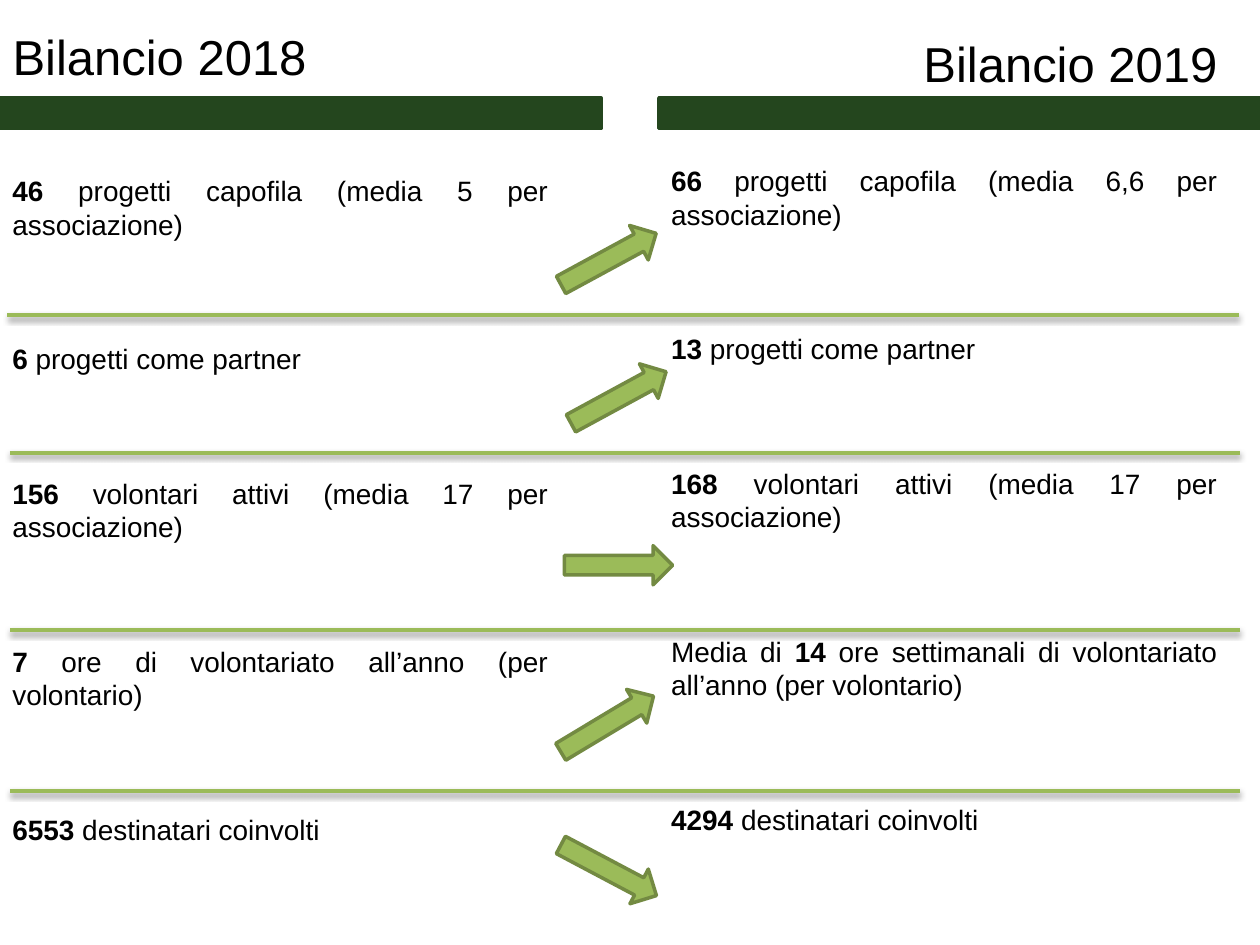
from lxml import etree
from pptx import Presentation
from pptx.dml.color import RGBColor
from pptx.enum.shapes import MSO_CONNECTOR, MSO_SHAPE
from pptx.enum.text import MSO_ANCHOR, MSO_AUTO_SIZE, PP_ALIGN
from pptx.oxml.ns import qn
from pptx.util import Cm, Pt

RECT, ARROW = MSO_SHAPE.RECTANGLE, MSO_SHAPE.RIGHT_ARROW
STRAIGHT = MSO_CONNECTOR.STRAIGHT
TOP, NO_FIT = MSO_ANCHOR.TOP, MSO_AUTO_SIZE.NONE
JUSTIFY, RIGHT = PP_ALIGN.JUSTIFY, PP_ALIGN.RIGHT

BLACK = RGBColor(0x00, 0x00, 0x00)
DARK_GREEN = RGBColor(0x24, 0x46, 0x1E)
GREEN = RGBColor(0x9B, 0xBB, 0x59)
OLIVE = RGBColor(0x73, 0x8A, 0x42)

FONT = "Arial"
LINE_PT = 19.2  # line pitch of the body text
GAP_LINES = 3   # free lines between two entries

# Each entry: text before the figure, figure, text after it
ENTRIES_2018 = [
    ("", "46", " progetti capofila (media 5 per associazione)"),
    ("", "6", " progetti come partner"),
    ("", "156", " volontari attivi (media 17 per associazione)"),
    ("", "7", " ore di volontariato all’anno (per volontario)"),
    ("", "6553", " destinatari coinvolti"),
]
ENTRIES_2019 = [
    ("", "66", " progetti capofila (media 6,6 per associazione)"),
    ("", "13", " progetti come partner"),
    ("", "168", " volontari attivi (media 17 per associazione)"),
    ("Media di ", "14", " ore settimanali di volontariato all’anno (per volontario)"),
    ("", "4294", " destinatari coinvolti"),
]
# Left, right, height of each divider (cm)
DIVIDERS = [(0.15, 24.97, 6.35), (0.2, 24.99, 9.13),
            (0.2, 24.99, 12.7), (0.2, 24.99, 15.95)]
# Left, top (cm) and rotation of each trend arrow
TRENDS = [(11.18, 4.83, 331.5), (11.38, 7.62, 331.5), (11.38, 11, 0),
          (11.15, 14.2, 329), (11.18, 17.15, 27.9)]


def set_font(p, size):
    p.font.name = FONT
    p.font.size = Pt(size)
    p.font.color.rgb = BLACK


def format_heading(sp, text, left, top, align):
    sp.left, sp.top, sp.width, sp.height = Cm(left), Cm(top), Cm(11.3), Cm(2.64)
    tf = sp.text_frame
    tf.word_wrap, tf.auto_size, tf.vertical_anchor = True, NO_FIT, TOP
    tf.margin_top = Cm(0.26)
    p = tf.paragraphs[0]
    p.text, p.alignment = text, align
    set_font(p, 28)


def add_entries(s, left, top, width, entries):
    tf = s.shapes.add_textbox(Cm(left), Cm(top), Cm(width), Cm(13.94)).text_frame
    tf.word_wrap = True
    for i, (before, figure, after) in enumerate(entries):
        p = tf.add_paragraph() if i else tf.paragraphs[0]
        p.alignment = JUSTIFY
        p.line_spacing = Pt(LINE_PT)
        if i:
            p.space_before = Pt(GAP_LINES * LINE_PT)
        set_font(p, 16)
        for text, bold in ((before, False), (figure, True), (after, False)):
            if text:
                r = p.add_run()
                r.text, r.font.bold = text, bold


def add_filled(s, kind, left, top, width, height, fill, line):
    sp = s.shapes.add_shape(kind, Cm(left), Cm(top), Cm(width), Cm(height))
    sp.shadow.inherit = False
    sp.fill.solid()
    sp.fill.fore_color.rgb = fill
    sp.line.color.rgb = line
    sp.line.width = Pt(2)
    return sp


def add_divider(s, left, right, y):
    line = s.shapes.add_connector(STRAIGHT, Cm(left), Cm(y), Cm(right), Cm(y))
    line.line.color.rgb = GREEN
    line.line.width = Pt(2)
    # Soft shadow below the line
    effects = etree.SubElement(line._element.spPr, qn("a:effectLst"))
    shadow = etree.SubElement(effects, qn("a:outerShdw"), blurRad="40000",
                              dist="20000", dir="5400000", rotWithShape="0")
    color = etree.SubElement(shadow, qn("a:srgbClr"), val=str(BLACK))
    etree.SubElement(color, qn("a:alpha"), val="38000")


def main():
    prs = Presentation()
    prs.slide_width, prs.slide_height = Cm(25.4), Cm(19.05)
    s = prs.slides.add_slide(prs.slide_layouts[5])

    # Headings and their bars
    format_heading(s.shapes.title, "Bilancio 2018", 0, 0.28, JUSTIFY)
    heading = s.shapes.add_textbox(0, 0, 0, 0)
    format_heading(heading, "Bilancio 2019", 13.49, 0.41, RIGHT)
    for left in (0, 13.28):
        add_filled(s, RECT, left, 1.98, 12.12, 0.61, DARK_GREEN, DARK_GREEN)

    # Figures of the two years
    add_entries(s, 0, 3.38, 11.3, ENTRIES_2018)
    add_entries(s, 13.28, 3.18, 11.51, ENTRIES_2019)

    # Dividers and trend arrows
    for left, right, y in DIVIDERS:
        add_divider(s, left, right, y)
    for left, top, rotation in TRENDS:
        arrow = add_filled(s, ARROW, left, top, 2.18, 0.79, GREEN, OLIVE)
        arrow.rotation = rotation

    prs.save("out.pptx")


if __name__ == "__main__":
    main()
